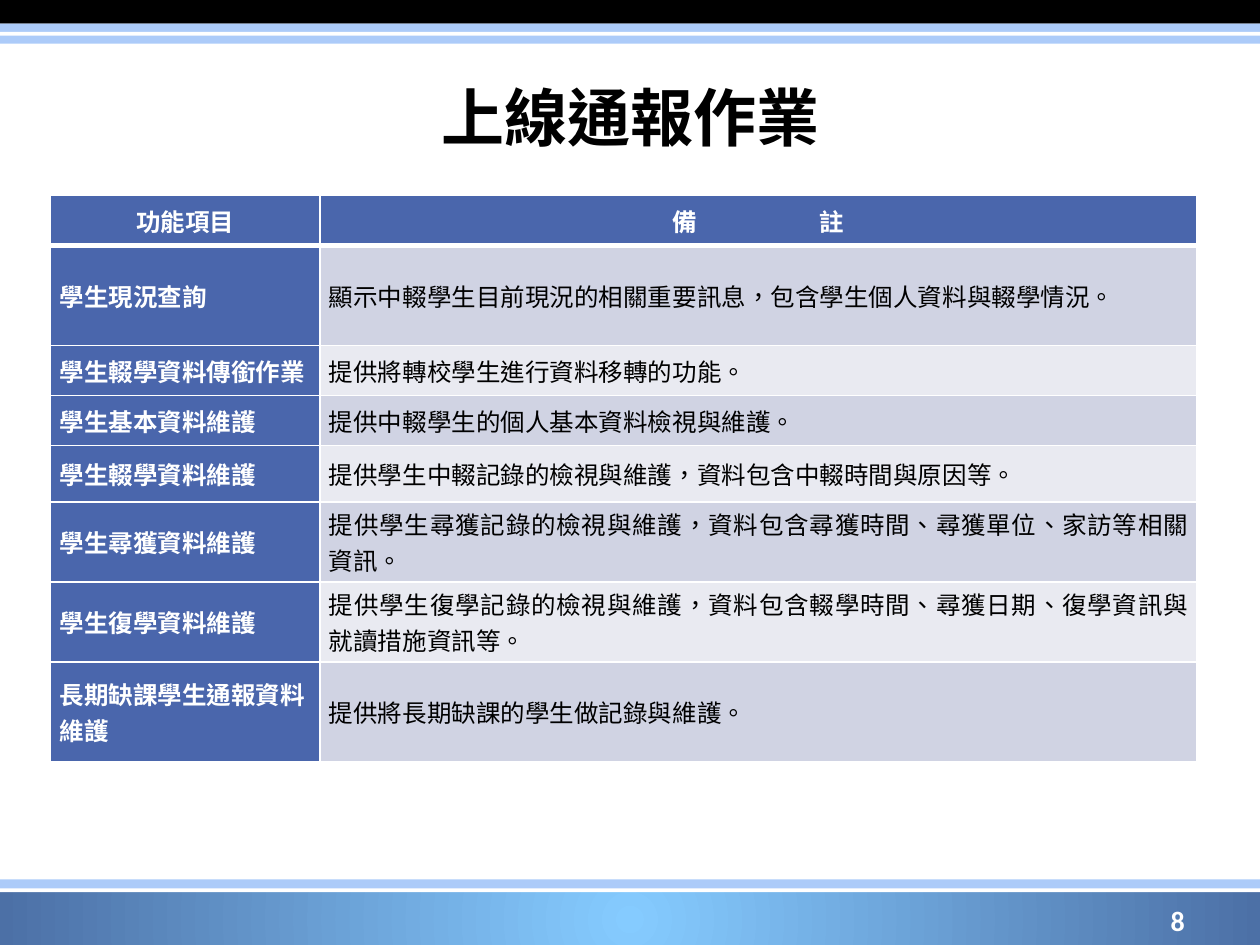
from lxml import etree
from pptx import Presentation
from pptx.dml.color import RGBColor
from pptx.enum import lang, shapes, text
from pptx.oxml import parse_xml
from pptx.oxml.ns import nsdecls, qn
from pptx.util import Pt

TITLE = "上線通報作業"
PAGE = "8"
HEAD = ("功能項目", "備註")
ROWS = [  # item, remark, row height
    ("學生現況查詢", "顯示中輟學生目前現況的相關重要訊息，包含學生個人資料與輟學情況。", 57),
    ("學生輟學資料傳銜作業", "提供將轉校學生進行資料移轉的功能。", 28.6),
    ("學生基本資料維護", "提供中輟學生的個人基本資料檢視與維護。", 28.6),
    ("學生輟學資料維護", "提供學生中輟記錄的檢視與維護，資料包含中輟時間與原因等。", 32.5),
    ("學生尋獲資料維護",
     "提供學生尋獲記錄的檢視與維護，資料包含尋獲時間、尋獲單位、家訪等相關資訊。", 45.6),
    ("學生復學資料維護",
     "提供學生復學記錄的檢視與維護，資料包含輟學時間、尋獲日期、復學資訊與就讀措施資訊等。", 45.8),
    ("長期缺課學生通報資料維護", "提供將長期缺課的學生做記錄與維護。", 57),
]
HEAD_H = 28.6
COLS = (154, 501)
BLUE, PALE, BANDS = "4A66AC", "ACCBF9", ("D0D3E3", "E9EAF1")
BARS = [  # left, top, width, height, fill (None: glow)
    (0, 0, 720, 13.5, "000000"),
    (0, 13.5, 720, 11.5, PALE),
    (0, 18.2, 720, 2.2, "FFFFFF"),
    (-0.5, 509, 721, 33, None),
    (-0.5, 502.5, 721, 7, PALE),
    (-0.5, 507.6, 721, 2.2, "FFFFFF"),
]
GLOW = ("85CBFF", "4C70A6")
ALIGN = text.PP_ALIGN


def rgb(code):
    return RGBColor.from_string(code)


def style(run, size, name, color, bold):
    look = {"size": Pt(size), "name": name, "bold": bold,
            "language_id": lang.MSO_LANGUAGE_ID.TRADITIONAL_CHINESE}
    for key, val in look.items():
        setattr(run.font, key, val)
    run.font.color.rgb = rgb(color)


def glow(shape):
    """Fill a shape with a gradient that spreads from its centre."""
    stops = "".join(f'<a:gs pos="{i * 100000}"><a:srgbClr val="{c}"/></a:gs>'
                    for i, c in enumerate(GLOW))
    grad = parse_xml(
        f'<a:gradFill {nsdecls("a")} rotWithShape="1"><a:gsLst>{stops}</a:gsLst>'
        '<a:path path="circle"><a:fillToRect l="50000" t="50000" r="50000" b="50000"/>'
        '</a:path></a:gradFill>')
    shape.element.spPr.find(qn("a:prstGeom")).addnext(grad)


def border(cell, top, bottom):
    """Draw white cell edges; call before the cell is filled."""
    props = cell._tc.get_or_add_tcPr()
    for side, width in zip("LRTB", (1, 1, top, bottom)):
        line = etree.SubElement(props, qn(f"a:ln{side}"), w=str(Pt(width)))
        fill = etree.SubElement(line, qn("a:solidFill"))
        etree.SubElement(fill, qn("a:srgbClr"), val="FFFFFF")


def fill_cell(cell, words, row, col):
    head = row == 0
    strong = head or col == 0
    border(cell, 3 if row == 1 else 1, 3 if head else 1)
    cell.fill.solid()
    cell.fill.fore_color.rgb = rgb(BLUE if strong else BANDS[(row - 1) % 2])
    form = {"vertical_anchor": text.MSO_ANCHOR.MIDDLE,
            "margin_left": Pt(5), "margin_right": Pt(5),
            "margin_top": 0, "margin_bottom": 0}
    for key, val in form.items():
        setattr(cell, key, val)
    para = cell.text_frame.paragraphs[0]
    para.alignment = (ALIGN.CENTER if head else
                      ALIGN.JUSTIFY if col else ALIGN.LEFT)
    para.space_before = para.space_after = Pt(1.2)
    wide = head and col == 1
    for part in (words if wide else [words]):
        run = para.add_run()
        run.text = part
        style(run, 14, "Times New Roman", "FFFFFF" if strong else "000000", strong)
    if wide:  # spread the two characters five widths apart
        para.runs[0].font._element.set("spc", "7000")


def place(shape, left, top, width, height):
    shape.left, shape.top = Pt(left), Pt(top)
    shape.width, shape.height = Pt(width), Pt(height)


def write(shape, words, align, *look):
    frame = shape.text_frame
    frame.word_wrap = True
    frame.vertical_anchor = text.MSO_ANCHOR.MIDDLE
    para = frame.paragraphs[0]
    para.alignment = align
    run = para.add_run()
    run.text = words
    style(run, *look)


def main():
    prs = Presentation()
    prs.slide_width, prs.slide_height = Pt(720), Pt(540)
    slide = prs.slides.add_slide(prs.slide_layouts[5])
    tree = slide.shapes

    for *box, color in BARS:
        bar = tree.add_shape(shapes.MSO_SHAPE.RECTANGLE, *map(Pt, box))
        bar.shadow.inherit = False
        bar.line.fill.background()
        if color:
            bar.fill.solid()
            bar.fill.fore_color.rgb = rgb(color)
        else:
            glow(bar)

    place(tree.title, 36, 21.6, 648, 90)
    write(tree.title, TITLE, ALIGN.CENTER, 36, "Karla", "000000", True)
    page = tree.add_textbox(Pt(516), Pt(511.5), Pt(168), Pt(28.8))
    write(page, PAGE, ALIGN.RIGHT, 16, "Calibri", "FFFFFF", True)

    data = [(*HEAD, HEAD_H), *ROWS]
    high = sum(row[2] for row in data)
    table = tree.add_table(len(data), len(COLS), Pt(29), Pt(111.8),
                           Pt(sum(COLS)), Pt(high)).table
    for col, width in zip(table.columns, COLS):
        col.width = Pt(width)
    for r, (*words, height) in enumerate(data):
        table.rows[r].height = Pt(height)
        for c, word in enumerate(words):
            fill_cell(table.cell(r, c), word, r, c)

    prs.save("out.pptx")


if __name__ == "__main__":
    main()
